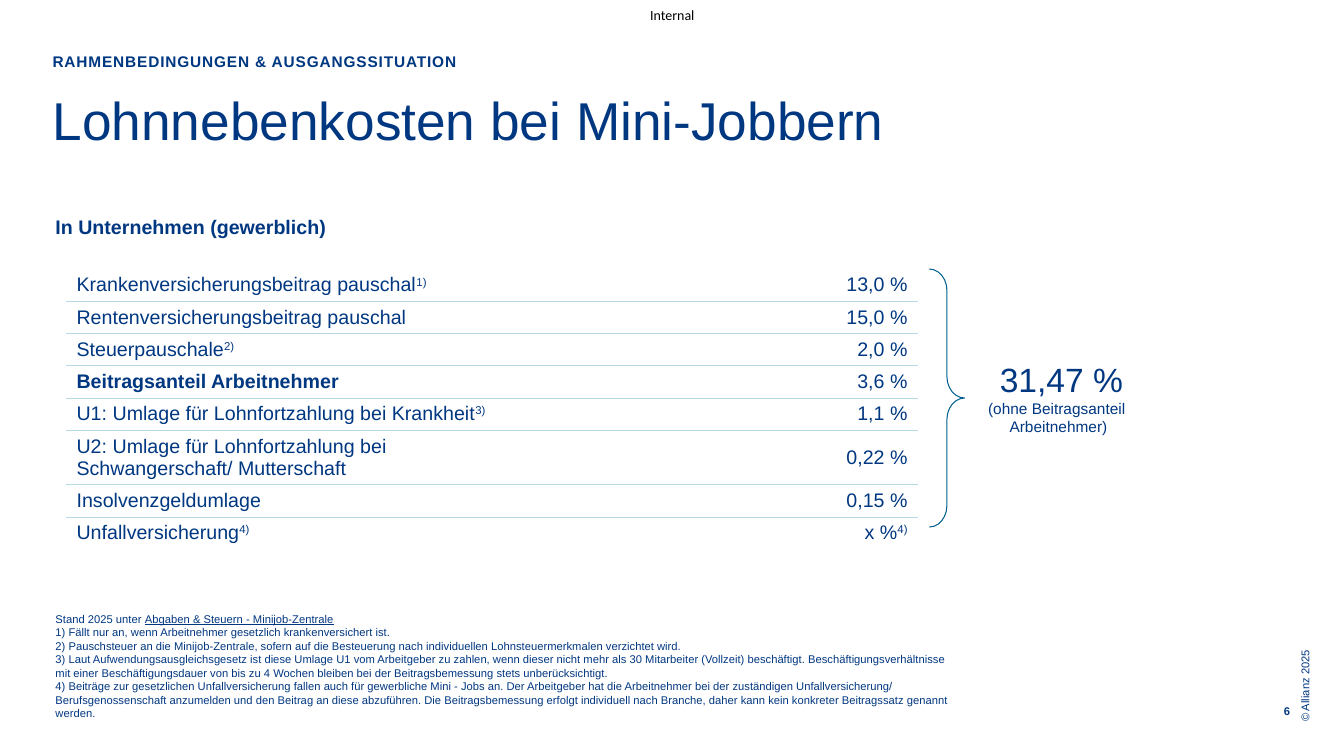
from lxml.etree import SubElement
from pptx import Presentation
from pptx.dml.color import RGBColor
from pptx.enum.shapes import MSO_SHAPE
from pptx.enum.text import MSO_ANCHOR, MSO_AUTO_SIZE, PP_ALIGN
from pptx.oxml import parse_xml
from pptx.oxml.ns import nsdecls, qn
from pptx.util import Pt

NAVY = RGBColor(0x00, 0x37, 0x81)
TEAL = RGBColor(0x00, 0x5F, 0x8F)
PALE_BLUE = RGBColor(0xB5, 0xDA, 0xE6)
WHITE = RGBColor(0xFF, 0xFF, 0xFF)
BLACK = RGBColor(0x00, 0x00, 0x00)

CONTRIBUTIONS = [
    ("Krankenversicherungsbeitrag pauschal", "1)", "13,0 %", ""),
    ("Rentenversicherungsbeitrag pauschal", "", "15,0 %", ""),
    ("Steuerpauschale", "2)", "2,0 %", ""),
    ("Beitragsanteil Arbeitnehmer", "", "3,6 %", ""),
    ("U1: Umlage für Lohnfortzahlung bei Krankheit", "3)", "1,1 %", ""),
    ("U2: Umlage für Lohnfortzahlung bei Schwangerschaft/ Mutterschaft", "", "0,22 %", ""),
    ("Insolvenzgeldumlage", "", "0,15 %", ""),
    ("Unfallversicherung", "4)", "x %", "4)"),
]
EMPLOYEE_ROW = 3
TWO_LINE_ROW = 5

FOOTNOTES = [
    "1) Fällt nur an, wenn Arbeitnehmer gesetzlich krankenversichert ist.",
    "2) Pauschsteuer an die Minijob-Zentrale, sofern auf die Besteuerung nach individuellen "
    "Lohnsteuermerkmalen verzichtet wird.",
    "3) Laut Aufwendungsausgleichsgesetz ist diese Umlage U1 vom Arbeitgeber zu zahlen, wenn dieser "
    "nicht mehr als 30 Mitarbeiter (Vollzeit) beschäftigt. Beschäftigungsverhältnisse mit einer "
    "Beschäftigungsdauer von bis zu 4 Wochen bleiben bei der Beitragsbemessung stets unberücksichtigt.",
    "4) Beiträge zur gesetzlichen Unfallversicherung fallen auch für gewerbliche Mini - Jobs an. "
    "Der Arbeitgeber hat die Arbeitnehmer bei der zuständigen Unfallversicherung/ "
    "Berufsgenossenschaft anzumelden und den Beitrag an diese abzuführen. Die Beitragsbemessung "
    "erfolgt individuell nach Branche, daher kann kein konkreter Beitragssatz genannt werden.",
]


def apply(target, values):
    for name, value in values.items():
        setattr(target, name, value)


class SlideBuilder:
    def __init__(self, slide, font="Arial", color=NAVY):
        self.slide = slide
        self.font = font
        self.color = color

    def set_paragraphs(self, frame, paragraphs):
        """Fill a frame; a paragraph is (runs, format), a run (text, size, font format, rPr attributes)."""
        for index, (runs, layout) in enumerate(paragraphs):
            paragraph = frame.add_paragraph() if index else frame.paragraphs[0]
            properties = paragraph._p.get_or_add_pPr()
            properties.set("marL", "0")
            properties.set("indent", "0")
            SubElement(properties, qn("a:buNone"))
            apply(paragraph, {"alignment": PP_ALIGN.LEFT, "space_before": Pt(0),
                              "space_after": Pt(0), **layout})
            for text, size, style, extra in runs:
                run = paragraph.add_run()
                run.text = text
                apply(run.font, {"name": self.font, "size": Pt(size), "bold": False, **style})
                run.font.color.rgb = self.color
                for name, value in extra.items():
                    run._r.get_or_add_rPr().set(name, value)

    def fill_frame(self, frame, paragraphs, inset, anchor, wrap=True):
        apply(frame, {"auto_size": MSO_AUTO_SIZE.NONE, "word_wrap": wrap, "vertical_anchor": anchor,
                      "margin_left": Pt(inset), "margin_right": Pt(inset),
                      "margin_top": Pt(inset / 2), "margin_bottom": Pt(inset / 2)})
        self.set_paragraphs(frame, paragraphs)

    def placeholder(self, index, bounds, paragraphs):
        holder = self.slide.placeholders[index]
        apply(holder, dict(zip(("left", "top", "width", "height"), map(Pt, bounds))))
        self.fill_frame(holder.text_frame, paragraphs, 0, MSO_ANCHOR.TOP)

    def text(self, bounds, paragraphs, inset=0, anchor=MSO_ANCHOR.MIDDLE, wrap=True, rotation=0):
        box = self.slide.shapes.add_textbox(*map(Pt, bounds))
        box.rotation = rotation
        self.fill_frame(box.text_frame, paragraphs, inset, anchor, wrap)

    def brace(self, bounds, curve):
        brace = self.slide.shapes.add_shape(MSO_SHAPE.RIGHT_BRACE, *map(Pt, bounds))
        brace.shadow.inherit = False
        brace.adjustments[0] = curve
        brace.fill.background()
        brace.line.color.rgb = TEAL
        brace.line.width = Pt(0.75)

    def border(self, cell, lines):
        """Set cell borders from (tag, colour, width) in schema order."""
        properties = cell._tc.get_or_add_tcPr()
        for position, (tag, color, width) in enumerate(lines):
            properties.insert(position, parse_xml(
                f'<a:{tag} {nsdecls("a")} w="{Pt(width)}"><a:solidFill>'
                f'<a:srgbClr val="{color}"/></a:solidFill></a:{tag}>'))

    def table(self, left, top, widths, heights, rows):
        """Draw a plain table; each row is a list of paragraphs, one for each cell."""
        table = self.slide.shapes.add_table(len(rows), len(widths), Pt(left), Pt(top),
                                            Pt(sum(widths)), Pt(sum(heights))).table
        apply(table, {"first_row": False, "horz_banding": False})
        for column, width in zip(table.columns, widths):
            column.width = Pt(width)
        rule, hidden = (PALE_BLUE, 0.25), (WHITE, 1)
        for number, (row, height, content) in enumerate(zip(table.rows, heights, rows)):
            row.height = Pt(height)
            above = rule if number else hidden
            below = rule if number < len(rows) - 1 else hidden
            for cell, paragraph in zip(row.cells, content):
                apply(cell, {"vertical_anchor": MSO_ANCHOR.MIDDLE,
                             "margin_top": Pt(3.4), "margin_bottom": Pt(3.4)})
                cell.fill.background()
                self.border(cell, [("lnL", *hidden), ("lnR", *hidden),
                                   ("lnT", *above), ("lnB", *below)])
                self.set_paragraphs(cell.text_frame, [paragraph])


def contribution_cell(text, mark, bold, alignment):
    runs = [(text, 14, {"bold": bold}, {})]
    if mark:
        runs.append((mark, 14, {}, {"baseline": "30000"}))
    return runs, {"alignment": alignment}


def main():
    presentation = Presentation()
    apply(presentation, {"slide_width": Pt(960), "slide_height": Pt(540)})
    slide = presentation.slides.add_slide(presentation.slide_layouts[3])
    builder = SlideBuilder(slide)
    centered = {"alignment": PP_ALIGN.CENTER}

    SlideBuilder(slide, "Calibri", BLACK).text(
        (453.6, 0, 53.3, 21), [([("Internal", 10, {}, {})], centered)])
    builder.placeholder(1, (37.5, 37.5, 734.4, 20), [
        ([("RAHMENBEDINGUNGEN & AUSGANGSSITUATION", 11, {"bold": True}, {"spc": "60"})], {})])
    builder.placeholder(0, (37.5, 70, 774, 72), [
        ([("Lohnnebenkosten bei Mini-Jobbern", 38, {}, {})], {"line_spacing": Pt(38)})])

    note_format = {"line_spacing": Pt(9.6)}
    builder.placeholder(2, (39.6, 153.4, 640.8, 381), [
        ([("In Unternehmen (gewerblich)", 14, {"bold": True}, {})], {}),
        ([("Stand 2025 unter ", 8, {}, {}),
          ("Abgaben & Steuern - Minijob-Zentrale", 8, {"underline": True}, {})],
         {**note_format, "space_before": Pt(267)}),
        *[([(note, 8, {}, {})], note_format) for note in FOOTNOTES],
    ])

    rows = [[contribution_cell(label, label_mark, number == EMPLOYEE_ROW, PP_ALIGN.LEFT),
             contribution_cell(rate, rate_mark, False, PP_ALIGN.RIGHT)]
            for number, (label, label_mark, rate, rate_mark) in enumerate(CONTRIBUTIONS)]
    heights = [39 if number == TWO_LINE_ROW else 23 for number in range(len(rows))]
    builder.table(47.5, 192.2, [309, 299], heights, rows)

    builder.brace((663.8, 192.2, 25.2, 184.3), 0.61)
    builder.text((698.4, 252.7, 113, 63.4), [
        ([(" 31,47 %", 24, {}, {})], centered),
        ([("(ohne Beitragsanteil", 11, {}, {})], centered),
        ([(" Arbeitnehmer)", 11, {}, {})], centered),
    ], inset=7.2, anchor=MSO_ANCHOR.TOP, wrap=False)

    builder.text((900.7, 501.8, 20.9, 11.5), [
        ([("6", 8, {"bold": True}, {})], {"alignment": PP_ALIGN.RIGHT, "line_spacing": Pt(10)})])
    builder.text((879.1, 466.6, 100.8, 11.5), [([("© Allianz 2025", 8, {}, {})], {})],
                 inset=7.2, anchor=MSO_ANCHOR.TOP, rotation=270)

    presentation.save("out.pptx")


if __name__ == "__main__":
    main()
